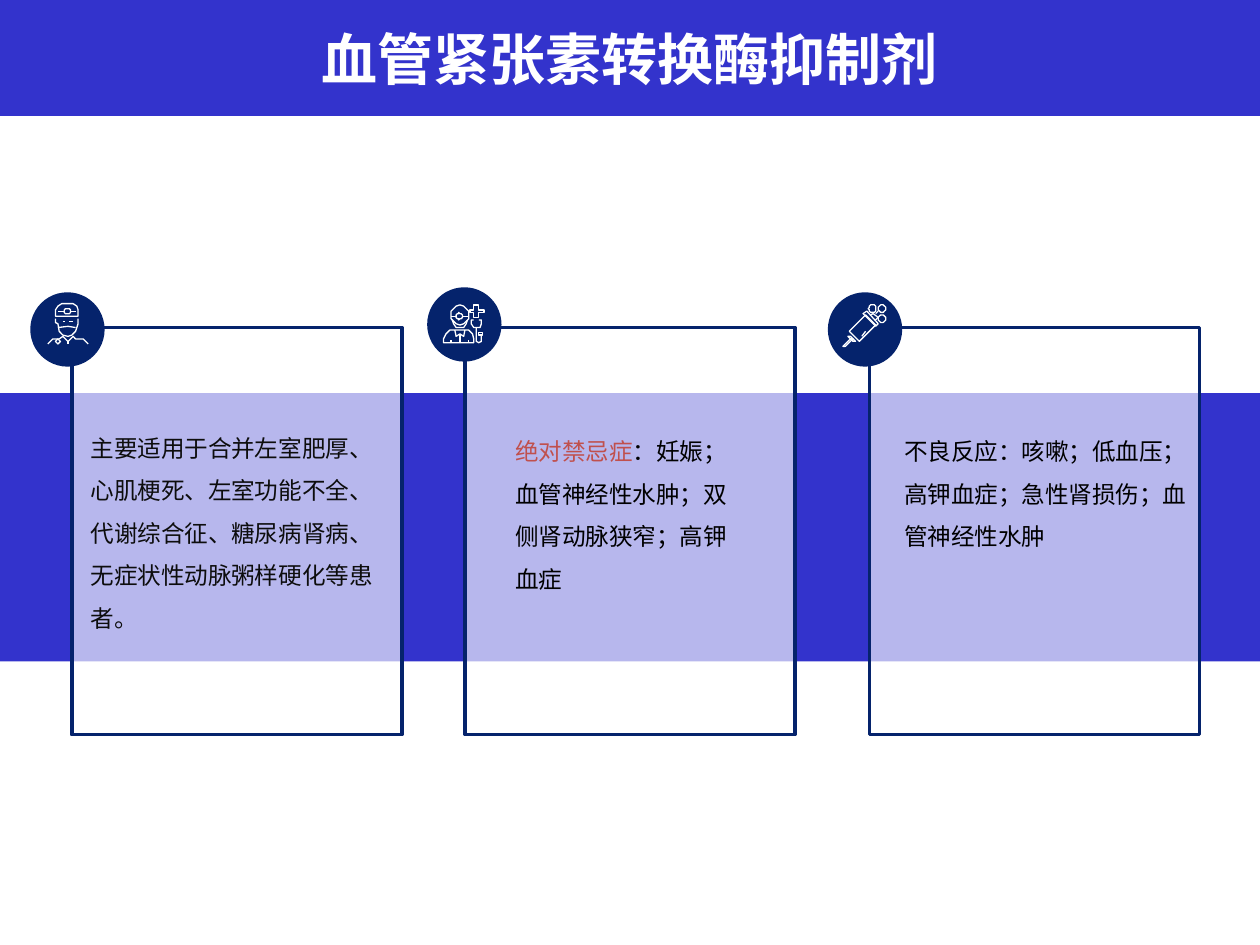
import math

import pptx
import pptx.dml.color
import pptx.enum.shapes
import pptx.enum.text
import pptx.oxml.ns
import pptx.oxml.xmlchemy
import pptx.util

SLIDE_W = pptx.util.Inches(10)
SLIDE_H = pptx.util.Inches(7.5)
FONT = "Noto Sans CJK SC"
COLORS = {
    "band": "3333CC",
    "navy": "05236C",
    "white": "FFFFFF",
    "ink": "0D0D0D",
    "black": "000000",
    "warning": "C0504D",
}
RECT = pptx.enum.shapes.MSO_SHAPE.RECTANGLE
OVAL = pptx.enum.shapes.MSO_SHAPE.OVAL
ICON_UNIT = pptx.util.Inches(0.01)
CARD_TOP, CARD_W, CARD_H = 34.67, 26.2, 43.07
BADGE_W, BADGE_H = 5.9, 7.87


def rgb(name):
    return pptx.dml.color.RGBColor.from_string(COLORS[name])


def across(percent):
    return round(SLIDE_W * percent / 100)


def down(percent):
    return round(SLIDE_H * percent / 100)


def place(left, top, width, height):
    return across(left), down(top), across(width), down(height)


def ring(x, y, radius, steps=16):
    angles = [2 * math.pi * step / steps for step in range(steps + 1)]
    return [(x + radius * math.cos(a), y + radius * math.sin(a)) for a in angles]


def closed(*points):
    return [*points, points[0]]


DOCTOR = [
    closed((6.5, 10.5), (6.5, 5), (8, 2), (11, 0.5), (20, 0.5), (23, 2), (24.5, 5), (24.5, 10.5)),
    ring(15.5, 6, 2.2),
    [(8.5, 6), (13, 6)],
    [(18, 6), (22.5, 6)],
    [(11.5, 14.5), (14.5, 14.5)],
    [(17, 14.5), (20, 14.5)],
    [(6.5, 12), (6.5, 15), (7.5, 16), (9, 21.5), (12, 25), (15.5, 25.5),
     (19, 25), (22, 21.5), (23.5, 16), (24.5, 15), (24.5, 12)],
    [(8.5, 19), (15.5, 18), (22.5, 19)],
    [(0.5, 32), (1.5, 29.5), (4, 28), (9, 27.5), (12, 26.5), (15.5, 29.5),
     (19.5, 26.5), (22, 27.5), (28, 28), (30.5, 29.5), (31.5, 32)],
    ring(8, 30, 1.5),
    [(15.5, 29.5), (15.5, 32)],
]
PHYSICIAN = [
    ring(13, 8, 7.5),
    ring(12.5, 9, 2.5),
    [(6, 9), (10, 9)],
    [(15, 9), (20, 9)],
    [(7, 12), (8, 15), (10, 17.5), (13, 18.5), (15.5, 17.5), (18, 15), (19, 12)],
    closed((0.5, 30.5), (0.5, 27), (2, 23), (5, 20.5), (9, 19.5), (16, 19.5),
           (20, 20.5), (23, 23), (24.5, 27), (24.5, 30.5)),
    [(9, 19.5), (10, 25), (13, 23), (16, 25), (17, 19.5)],
    [(13, 23), (13, 30.5)],
    [(5.5, 28), (5.5, 30.5)],
    [(19.5, 28), (19.5, 30.5)],
    closed((24, 0.5), (28, 0.5), (28, 3.5), (31.5, 3.5), (31.5, 6.5), (28, 6.5),
           (28, 9.5), (24, 9.5), (24, 6.5), (21, 6.5), (21, 3.5), (24, 3.5)),
    [(24.5, 12), (22.5, 12), (22.5, 15), (24, 18), (26.5, 18.5),
     (29, 18), (30.5, 15), (30.5, 12), (28.5, 12)],
    [(26.5, 18.5), (26.5, 29), (28, 30.5), (29.5, 29), (29.5, 24.5)],
    ring(29.5, 23, 1.5),
]
SYRINGE = [
    closed((5, 22), (18, 9), (25.5, 17), (13, 30)),
    closed((16.5, 8), (19, 6.5), (28.5, 16.5), (26.5, 18.5)),
    closed((4.5, 26.5), (6, 25.5), (9.5, 29.5), (8.5, 30.5)),
    closed((0.5, 33.5), (6.5, 27.5), (7.5, 28.5), (1.5, 34.5)),
    [(22.5, 9), (24.5, 7.5), (28, 11), (26.5, 13)],
    [(25.5, 8.5), (28.5, 6)],
    [(15, 25.5), (18, 22.5)],
    ring(23.5, 4, 3),
    ring(31, 4, 3),
    ring(31, 12, 3),
]


def add_block(slide, kind, box, fill, outline=None, opacity=None):
    block = slide.shapes.add_shape(kind, *place(*box))
    block.shadow.inherit = False
    block.fill.solid()
    block.fill.fore_color.rgb = rgb(fill)
    if opacity:
        color = block._element.spPr.find(".//" + pptx.oxml.ns.qn("a:srgbClr"))
        alpha = pptx.oxml.xmlchemy.OxmlElement("a:alpha")
        alpha.set("val", str(opacity * 1000))
        color.append(alpha)
    if outline:
        block.line.color.rgb = rgb(outline)
        block.line.width = pptx.util.Pt(2)
    else:
        block.line.fill.background()
    return block


def add_run(paragraph, wording, size, color, bold=False):
    run = paragraph.add_run()
    run.text = wording
    run.font.name = FONT
    run.font.size = pptx.util.Pt(size)
    run.font.bold = bold
    run.font.color.rgb = rgb(color)
    east_asian = pptx.oxml.xmlchemy.OxmlElement("a:ea")
    east_asian.set("typeface", FONT)
    run.font._element.append(east_asian)


def add_note(slide, box, runs):
    frame = slide.shapes.add_textbox(*place(*box)).text_frame
    frame.word_wrap = True
    frame.auto_size = pptx.enum.text.MSO_AUTO_SIZE.SHAPE_TO_FIT_TEXT
    paragraph = frame.paragraphs[0]
    paragraph.line_spacing = 1.5
    for wording, color in runs:
        add_run(paragraph, wording, 13.5, color)


def add_icon(slide, left, top, strokes):
    builder = slide.shapes.build_freeform(*strokes[0][0], scale=ICON_UNIT)
    for stroke in strokes:
        builder.move_to(*stroke[0])
        builder.add_line_segments(stroke[1:], close=False)
    icon = builder.convert_to_shape(across(left), down(top))
    icon.shadow.inherit = False
    icon.fill.background()
    icon.line.color.rgb = rgb("white")
    icon.line.width = pptx.util.Pt(0.75)


def add_title(slide, wording):
    banner = add_block(slide, RECT, (0, 0, 100, 12.27), "band")
    banner.text_frame.vertical_anchor = pptx.enum.text.MSO_ANCHOR.MIDDLE
    paragraph = banner.text_frame.paragraphs[0]
    paragraph.alignment = pptx.enum.text.PP_ALIGN.CENTER
    add_run(paragraph, wording, 32, "white", bold=True)


def main():
    deck = pptx.Presentation()
    deck.slide_width, deck.slide_height = SLIDE_W, SLIDE_H
    slide = deck.slides.add_slide(deck.slide_layouts[6])

    cards = [
        (5.7, (2.4, 30.93), (3.8, 32.13), DOCTOR, (6.2, 43.73, 26.2, 23.6),
         [("主要适用于合并左室肥厚、心肌梗死、左室功能不全、代谢综合征、糖尿病肾病、"
           "无症状性动脉粥样硬化等患者。", "ink")]),
        (36.9, (33.9, 30.4), (35.2, 32.27), PHYSICIAN, (39.9, 44.13, 20.5, 19.07),
         [("绝对禁忌症", "warning"),
          ("：妊娠；血管神经性水肿；双侧肾动脉狭窄；高钾血症", "black")]),
        (69, (65.7, 30.93), (66.9, 32.13), SYRINGE, (70.8, 44.13, 24.4, 14.4),
         [("不良反应：咳嗽；低血压；高钾血症；急性肾损伤；血管神经性水肿", "black")]),
    ]

    add_block(slide, RECT, (0, 41.6, 100.2, 28.4), "band")
    for card_left, badge, icon, strokes, note_box, runs in cards:
        add_block(slide, RECT, (card_left, CARD_TOP, CARD_W, CARD_H), "white", "navy", 65)
        add_block(slide, OVAL, (*badge, BADGE_W, BADGE_H), "navy")
        add_note(slide, note_box, runs)
        add_icon(slide, *icon, strokes)
    add_title(slide, "血管紧张素转换酶抑制剂")

    deck.save("out.pptx")


if __name__ == "__main__":
    main()
